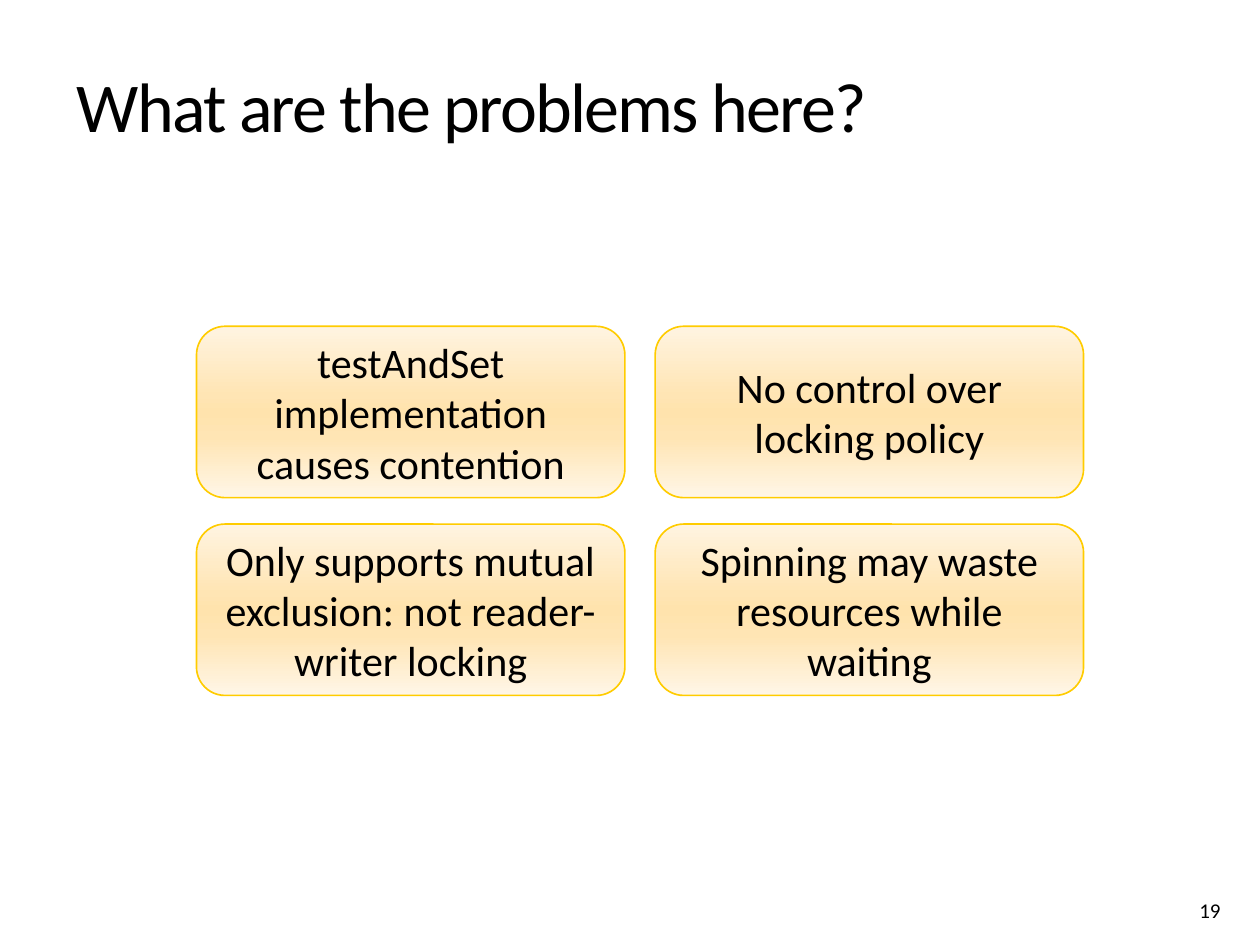
import pptx
import pptx.dml.color
import pptx.enum.shapes
import pptx.enum.text
import pptx.oxml
import pptx.oxml.ns
import pptx.util
from dataclasses import dataclass

# Content, in grid rows
TITLE = "What are the problems here?"
PROBLEMS = [
    ["testAndSet implementation causes contention",
     "No control over locking policy"],
    ["Only supports mutual exclusion: not reader-writer locking",
     "Spinning may waste resources while waiting"],
]
PAGE_NUMBER = "19"


@dataclass(frozen=True)
class Theme:
    font: str = "Calibri"
    text: str = "000000"
    border: str = "FFCC00"
    border_width: float = 0.94
    # Percent along the gradient, colour
    gradient: tuple = ((0, "FFF4E1"), (40, "FFE5B4"), (50, "FFE3AD"),
                       (65, "FFE5B4"), (100, "FFF6E7"))
    title_size: int = 40
    card_size: int = 24
    number_size: int = 12


THEME = Theme()
INCH = pptx.util.Inches
ANCHOR = pptx.enum.text.MSO_ANCHOR
ALIGN = pptx.enum.text.PP_ALIGN

# Card grid, in inches
GRID_LEFT, GRID_TOP = 1.56, 2.59
CARD_WIDTH, CARD_HEIGHT = 3.4, 1.36
COLUMN_STEP, ROW_STEP = 3.64, 1.57


def rgb(value):
    return pptx.dml.color.RGBColor.from_string(value)


def write(shape, text, size, align, anchor):
    frame = shape.text_frame
    frame.word_wrap = True
    frame.auto_size = pptx.enum.text.MSO_AUTO_SIZE.NONE
    frame.vertical_anchor = anchor
    paragraph = frame.paragraphs[0]
    paragraph.text = text
    paragraph.alignment = align
    paragraph.font.name = THEME.font
    paragraph.font.size = pptx.util.Pt(size)
    paragraph.font.color.rgb = rgb(THEME.text)
    return paragraph


def fill_gradient(shape):
    shape.fill.gradient()
    shape.fill.gradient_angle = 270  # top to bottom
    stops = shape.fill._fill._gradFill.find(pptx.oxml.ns.qn("a:gsLst"))
    for stop in list(stops):
        stops.remove(stop)
    for percent, color in THEME.gradient:
        stops.append(pptx.oxml.parse_xml(
            f'<a:gs {pptx.oxml.ns.nsdecls("a")} pos="{percent * 1000}">'
            f'<a:srgbClr val="{color}"/></a:gs>'))


def add_card(slide, text, row, column):
    card = slide.shapes.add_shape(
        pptx.enum.shapes.MSO_SHAPE.ROUNDED_RECTANGLE,
        INCH(GRID_LEFT + column * COLUMN_STEP), INCH(GRID_TOP + row * ROW_STEP),
        INCH(CARD_WIDTH), INCH(CARD_HEIGHT))
    card.shadow.inherit = False
    fill_gradient(card)
    card.line.color.rgb = rgb(THEME.border)
    card.line.width = pptx.util.Pt(THEME.border_width)
    write(card, text, THEME.card_size, ALIGN.CENTER, ANCHOR.MIDDLE)


def main():
    deck = pptx.Presentation()
    deck.slide_width, deck.slide_height = INCH(10), INCH(7.5)
    slide = deck.slides.add_slide(deck.slide_layouts[5])

    # Title
    title = slide.shapes.title
    title.left, title.top = INCH(0.51), INCH(0.56)
    title.width, title.height = INCH(8.82), INCH(0.83)
    heading = write(title, TITLE, THEME.title_size, ALIGN.LEFT, ANCHOR.TOP)
    heading.line_spacing = pptx.util.Pt(THEME.title_size)
    heading.runs[0].font._element.set("spc", "-100")  # tighter letters

    # Problem cards
    for row, problems in enumerate(PROBLEMS):
        for column, problem in enumerate(problems):
            add_card(slide, problem, row, column)

    # Page number
    number = slide.shapes.add_textbox(INCH(9.42), INCH(6.97), INCH(0.5), INCH(0.4))
    write(number, PAGE_NUMBER, THEME.number_size, ALIGN.LEFT, ANCHOR.BOTTOM)

    deck.save("out.pptx")


if __name__ == "__main__":
    main()
